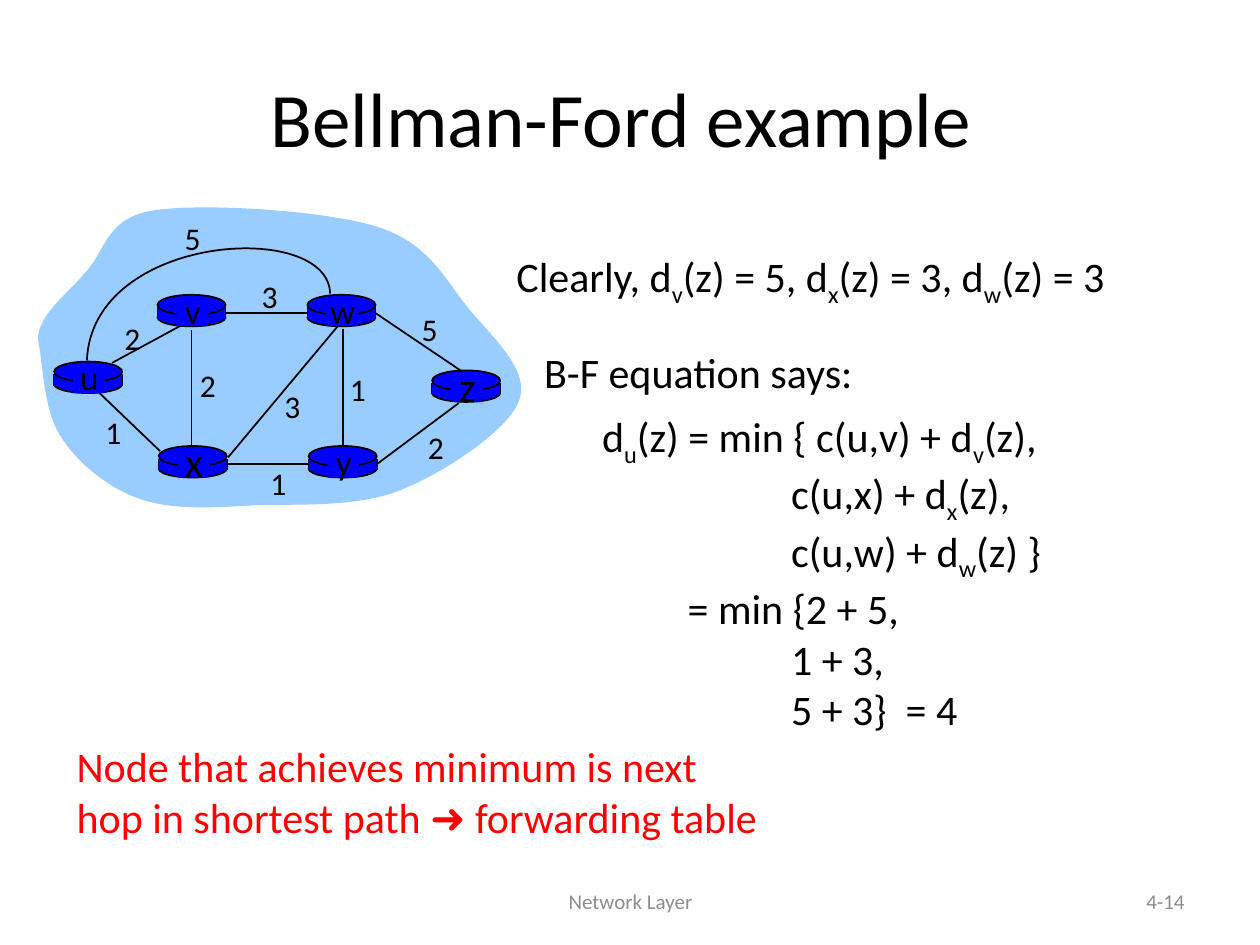
from lxml.etree import SubElement
from pptx import Presentation
from pptx.dml.color import RGBColor
from pptx.enum.shapes import MSO_CONNECTOR, MSO_SHAPE
from pptx.enum.text import MSO_ANCHOR, PP_ALIGN
from pptx.oxml.ns import qn
from pptx.util import Inches, Pt

THEME = {
    "font": "Calibri", "arrow_font": "Noto Sans CJK JP",
    "black": "000000", "red": "FF0000", "grey": "8C8C8C",
    "cloud": "99CCFF", "router": "0000FF",
    "title": 44, "text": 24, "node": 20, "cost": 18, "footer": 12, "line": 1,
}
LEFT, CENTER, RIGHT = PP_ALIGN.LEFT, PP_ALIGN.CENTER, PP_ALIGN.RIGHT

TITLE = "Bellman-Ford example "

# Text between bars is special: a subscript, or the arrow.
# lines as (indent, text), box, colour, size, alignment, anchor
TEXTS = [
    ([(0, "Network Layer")], (3.42, 6.95, 3.17, 0.4), "grey", "footer", CENTER, MSO_ANCHOR.MIDDLE),
    ([(0, "4-14")], (7.17, 6.95, 2.33, 0.4), "grey", "footer", RIGHT, MSO_ANCHOR.MIDDLE),
    ([(0, "Clearly, d|v|(z) = 5, d|x|(z) = 3, d|w|(z) = 3")],
     (4, 1.94, 5.81, 0.5), "black", "text", LEFT, MSO_ANCHOR.TOP),
    ([(0, "d|u|(z) = min { c(u,v) + d|v|(z),"),
      (1.5, "c(u,x) + d|x|(z),"),
      (1.5, "c(u,w) + d|w|(z) }"),
      (0.68, "= min {2 + 5,"),
      (1.5, "1 + 3,"),
      (1.5, "5 + 3}  = 4")],
     (4.68, 3.21, 4.44, 2.5), "black", "text", LEFT, MSO_ANCHOR.TOP),
    ([(0, "Node that achieves minimum is next"),
      (0, "hop in shortest path |➜ |forwarding table")],
     (0.51, 5.83, 6.56, 0.9), "red", "text", LEFT, MSO_ANCHOR.TOP),
    ([(0, "B-F equation says:")], (4.22, 2.7, 3.02, 0.5), "black", "text", LEFT, MSO_ANCHOR.TOP),
]

# name: left, top, letter size
ROUTERS = {
    "u": (0.43, 2.87, "node"), "x": (1.26, 3.54, "text"), "v": (1.25, 2.34, "node"),
    "w": (2.44, 2.34, "node"), "y": (2.45, 3.54, "node"), "z": (3.43, 2.94, "text"),
}
ROUTER_WIDTH = 0.54

# Each end is a point, or a router and its connection site.
EDGE_BEHIND = ((0.89, 2.88), (1.48, 2.56))
EDGES = [
    ((2.72, 2.61), ("y", 0)),
    ((1.52, 2.62), (1.52, 3.55)),
    ((1.81, 3.63), (2.68, 2.59)),
    (("y", 3), (3.64, 3.2)),
    (("y", 1), ("x", 3)),
    ((1.27, 3.58), (0.79, 3.12)),
    (("w", 1), ("v", 3)),
    ((3.67, 2.95), ("w", 3)),
]

# cost, centre of the label
COSTS = [
    ("2", 1.05, 2.68), ("2", 1.65, 3.06), ("1", 0.9, 3.43), ("3", 2.32, 3.22),
    ("1", 2.21, 3.83), ("1", 2.84, 3.09), ("2", 3.46, 3.55), ("5", 3.41, 2.61),
    ("3", 2.14, 2.35), ("5", 1.53, 1.89),
]

# Bezier curves: a start, then two handles and an end for each segment
CLOUD = [
    (0.3, 2.69), (0.31, 2.49), (0.53, 2.34), (0.68, 2.16),
    (0.84, 1.99), (0.84, 1.73), (1.22, 1.67), (1.61, 1.61), (2.58, 1.67), (2.99, 1.8),
    (3.41, 1.93), (3.53, 2.22), (3.72, 2.45), (3.91, 2.68), (4.21, 2.94), (4.12, 3.18),
    (4.03, 3.42), (3.53, 3.75), (3.18, 3.89), (2.83, 4.03), (2.37, 4), (2.03, 4.01),
    (1.68, 4.03), (1.37, 4.05), (1.11, 3.96), (0.85, 3.87), (0.61, 3.67), (0.48, 3.46),
    (0.34, 3.25), (0.34, 2.85), (0.3, 2.69),
]
ARC = [(2.62, 2.33), (2.61, 1.74), (0.73, 1.85), (0.69, 2.86)]


def color(name):
    return RGBColor.from_string(THEME[name])


def style(shape, fill=None, line=None):
    shape.shadow.inherit = False
    if fill:
        shape.fill.solid()
        shape.fill.fore_color.rgb = color(fill)
    else:
        shape.fill.background()
    if line:
        shape.line.color.rgb = color(line)
        shape.line.width = Pt(THEME["line"])
    else:
        shape.line.fill.background()


def write_line(para, text, hue, size, align):
    """Fill a paragraph, giving every second piece between bars its special format."""
    para.alignment = align
    for index, piece in enumerate(text.split("|")):
        span = para.add_run()
        span.text = piece
        arrow = "➜" in piece
        formats = {"name": THEME["arrow_font" if arrow else "font"], "size": Pt(THEME[size])}
        for key, value in formats.items():
            setattr(span.font, key, value)
        span.font.color.rgb = color(hue)
        if index % 2 and not arrow:
            span._r.get_or_add_rPr().set("baseline", "-25000")


def add_text(page, lines, place, hue, size, align=CENTER, anchor=MSO_ANCHOR.TOP):
    frame = page.shapes.add_textbox(*map(Inches, place)).text_frame
    frame.word_wrap = True
    frame.vertical_anchor = anchor
    for index, (indent, text) in enumerate(lines):
        para = frame.paragraphs[0] if index == 0 else frame.add_paragraph()
        if indent:
            para._p.get_or_add_pPr().set("marL", str(Inches(indent)))
        write_line(para, text, hue, size, align)


def add_part(page, kind, place, line=None):
    part = page.shapes.add_shape(kind, *map(Inches, place))
    style(part, "router", line)
    return part


def add_line(page, start, end):
    line = page.shapes.add_connector(MSO_CONNECTOR.STRAIGHT, *map(Inches, (*start, *end)))
    line.line.color.rgb = color("black")
    line.line.width = Pt(THEME["line"])
    SubElement(line._element.spPr, qn("a:effectLst"))
    return line


def add_router(page, left, top):
    """Draw a drum and return the shape that holds each connection site."""
    right, rim = left + ROUTER_WIDTH, top + 0.1
    add_part(page, MSO_SHAPE.OVAL, (left, top + 0.11, ROUTER_WIDTH, 0.14), "black")
    for side in (left, right):
        add_line(page, (side, rim), (side, rim + 0.09))
    band = add_part(page, MSO_SHAPE.RECTANGLE, (left, rim, ROUTER_WIDTH, 0.09))
    lid = add_part(page, MSO_SHAPE.OVAL, (left, top, ROUTER_WIDTH, 0.16), "black")
    return {0: lid, 1: band, 3: band}


def add_edge(page, start, end, sites):
    joined = [isinstance(tip[0], str) for tip in (start, end)]
    points = [(0, 0) if join else tip for join, tip in zip(joined, (start, end))]
    edge = add_line(page, *points)
    connects = (edge.begin_connect, edge.end_connect)
    for join, tip, connect in zip(joined, (start, end), connects):
        if join:
            name, site = tip
            connect(sites[name][site], site)


def add_curve(page, points, close, fill=None, line=None):
    """Build a polygon of the handles, then merge each three steps into one Bezier."""
    outline = [tuple(map(Inches, point)) for point in points]
    builder = page.shapes.build_freeform(*outline[0])
    builder.add_line_segments(outline[1:], close=close)
    shape = builder.convert_to_shape()
    steps = list(shape._element.iter(qn("a:lnTo")))
    for first in range(0, len(steps) - 2, 3):
        curve, *others = steps[first:first + 3]
        curve.tag = qn("a:cubicBezTo")
        for step in others:
            curve.append(step[0])
            step.getparent().remove(step)
    style(shape, fill, line)


def main():
    deck = Presentation()
    deck.slide_width, deck.slide_height = Inches(10), Inches(7.5)
    page = deck.slides.add_slide(deck.slide_layouts[5])

    title = page.shapes.title
    for key, value in zip(("left", "top", "width", "height"), (0.5, 0.3, 9, 1.25)):
        setattr(title, key, Inches(value))
    title.text_frame.vertical_anchor = MSO_ANCHOR.MIDDLE
    write_line(title.text_frame.paragraphs[0], TITLE, "black", "title", CENTER)

    add_curve(page, CLOUD, True, fill="cloud")
    add_line(page, *EDGE_BEHIND)
    sites = {name: add_router(page, left, top) for name, (left, top, _) in ROUTERS.items()}
    for start, end in EDGES:
        add_edge(page, start, end, sites)
    add_curve(page, ARC, False, line="black")

    for name, (left, top, size) in ROUTERS.items():
        add_part(page, MSO_SHAPE.RECTANGLE, (left + 0.15, top + 0.02, 0.25, 0.23))
        height = 0.5 if size == "text" else 0.43
        middle = top + 0.12
        add_text(page, [(0, name)], (left + 0.08, middle - height / 2, 0.4, height), "black", size)
    for cost, x, y in COSTS:
        add_text(page, [(0, cost)], (x - 0.18, y - 0.2, 0.36, 0.4), "black", "cost")
    for text in TEXTS:
        add_text(page, *text)

    deck.save("out.pptx")


if __name__ == "__main__":
    main()
